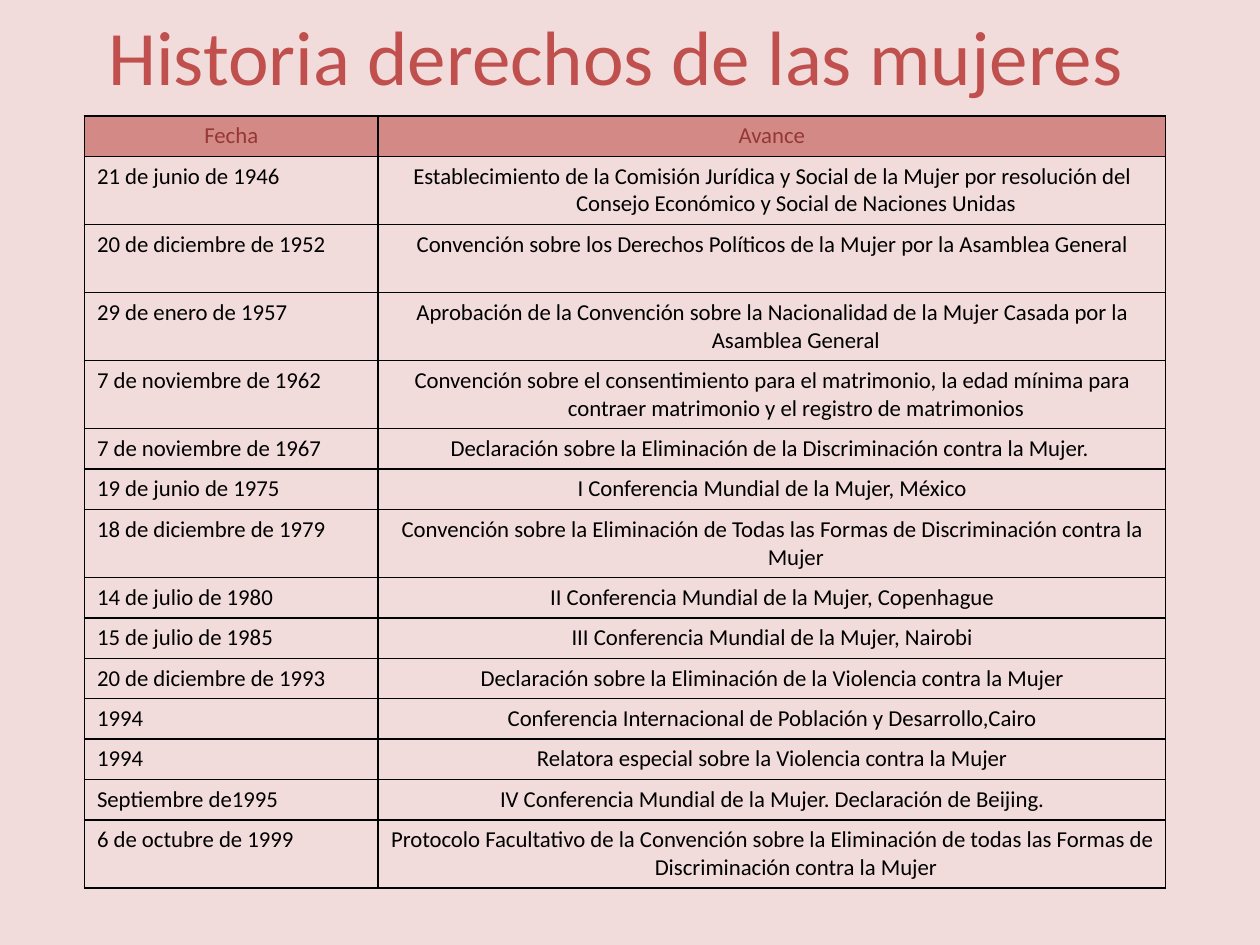
from lxml.etree import SubElement
from pptx import Presentation
from pptx.dml.color import RGBColor
from pptx.enum.text import MSO_ANCHOR, PP_ALIGN
from pptx.oxml.ns import qn
from pptx.util import Inches, Pt

HEADINGS = ("Fecha", "Avance")
MILESTONES = [
    ("21 de junio de 1946", "Establecimiento de la Comisión Jurídica y Social de la Mujer por "
     "resolución del Consejo Económico y Social de Naciones Unidas"),
    ("20 de diciembre de 1952",
     "Convención sobre los Derechos Políticos de la Mujer por la Asamblea General"),
    ("29 de enero de 1957", "Aprobación de la Convención sobre la Nacionalidad de la Mujer "
     "Casada por la Asamblea General"),
    ("7 de noviembre de 1962", "Convención sobre el consentimiento para el matrimonio, la edad "
     "mínima para contraer matrimonio y el registro de matrimonios"),
    ("7 de noviembre de 1967",
     "Declaración sobre la Eliminación de la Discriminación contra la Mujer. "),
    ("19 de junio de 1975", "I Conferencia Mundial de la Mujer, México"),
    ("18 de diciembre de 1979", "Convención sobre la Eliminación de Todas las Formas de "
     "Discriminación contra la Mujer"),
    ("14 de julio de 1980", "II Conferencia Mundial de la Mujer, Copenhague"),
    ("15 de julio de 1985", "III Conferencia Mundial de la Mujer, Nairobi"),
    ("20 de diciembre de 1993",
     "Declaración sobre la Eliminación de la Violencia contra la Mujer"),
    ("1994", "Conferencia Internacional de Población y Desarrollo,Cairo"),
    ("1994", "Relatora especial sobre la Violencia contra la Mujer"),
    ("Septiembre de1995", "IV Conferencia Mundial de la Mujer. Declaración de Beijing."),
    ("6 de octubre de 1999", "Protocolo Facultativo de la Convención sobre la Eliminación de "
     "todas las Formas de Discriminación contra la Mujer"),
]
COLUMN_WIDTHS = (2.33, 6.25)
ONE_LINE, TWO_LINES = 0.32, 0.54
LONGEST_SINGLE_LINE = 72


def paint(color_format, color):
    color_format.rgb = RGBColor.from_string(color)


def write(frame, text, size, color, font="Calibri", align=PP_ALIGN.LEFT, hanging=0):
    paragraph = frame.paragraphs[0]
    paragraph.text = text
    paragraph.alignment = align
    if hanging:
        properties = paragraph._p.get_or_add_pPr()
        properties.set("marL", str(Inches(hanging)))
        properties.set("indent", str(-Inches(hanging)))
    run_font = paragraph.runs[0].font
    run_font.name, run_font.size, run_font.bold = font, Pt(size), False
    paint(run_font.color, color)


def outline(cell, color, width):
    """Draw all four borders of a cell; they must precede its fill in the XML."""
    properties = cell._tc.get_or_add_tcPr()
    for side in ("a:lnL", "a:lnR", "a:lnT", "a:lnB"):
        line = SubElement(properties, qn(side), w=str(Pt(width)))
        fill = SubElement(line, qn("a:solidFill"))
        SubElement(fill, qn("a:srgbClr"), val=color)


class Deck:
    background, accent = "F2DCDB", "C0504D"
    header_fill, header_text, ink = "D38A86", "953735", "000000"

    def __init__(self):
        self.presentation = Presentation()
        self.presentation.slide_width = Inches(10)
        self.presentation.slide_height = Inches(7.5)
        self.slide = self.presentation.slides.add_slide(self.presentation.slide_layouts[5])
        fill = self.slide.background.fill
        fill.solid()
        paint(fill.fore_color, self.background)

    def title(self, text, left, top, width, height):
        heading = self.slide.shapes.title
        heading.left, heading.top = Inches(left), Inches(top)
        heading.width, heading.height = Inches(width), Inches(height)
        heading.text_frame.vertical_anchor = MSO_ANCHOR.MIDDLE
        write(heading.text_frame, text, 44, self.accent, align=PP_ALIGN.CENTER)

    def cell(self, cell, text, is_header, align):
        outline(cell, self.ink, 1)
        if is_header:
            cell.fill.solid()
            paint(cell.fill.fore_color, self.header_fill)
        else:
            cell.fill.background()
        cell.margin_left = cell.margin_right = Inches(0.1)
        cell.margin_top = cell.margin_bottom = Inches(0.05)
        color = self.header_text if is_header else self.ink
        write(cell.text_frame, text, 13, color, align=align, hanging=0.38)

    def timeline(self, headings, milestones, left, top):
        rows = [headings, *milestones]
        heights = [TWO_LINES if len(advance) > LONGEST_SINGLE_LINE else ONE_LINE
                   for _, advance in rows]
        table = self.slide.shapes.add_table(
            len(rows), len(headings), Inches(left), Inches(top),
            Inches(sum(COLUMN_WIDTHS)), Inches(sum(heights))).table
        table.first_row = table.horz_banding = False
        for column, width in zip(table.columns, COLUMN_WIDTHS):
            column.width = Inches(width)
        for r, (row, height) in enumerate(zip(rows, heights)):
            table.rows[r].height = Inches(height)
            for c, text in enumerate(row):
                is_date = r > 0 and c == 0
                align = PP_ALIGN.LEFT if is_date else PP_ALIGN.CENTER
                self.cell(table.cell(r, c), text, r == 0, align)


def main():
    deck = Deck()
    deck.title("Historia derechos de las mujeres", 0.67, -0.19, 8.44, 1.25)
    deck.timeline(HEADINGS, MILESTONES, 0.67, 0.92)
    deck.presentation.save("out.pptx")


if __name__ == "__main__":
    main()
